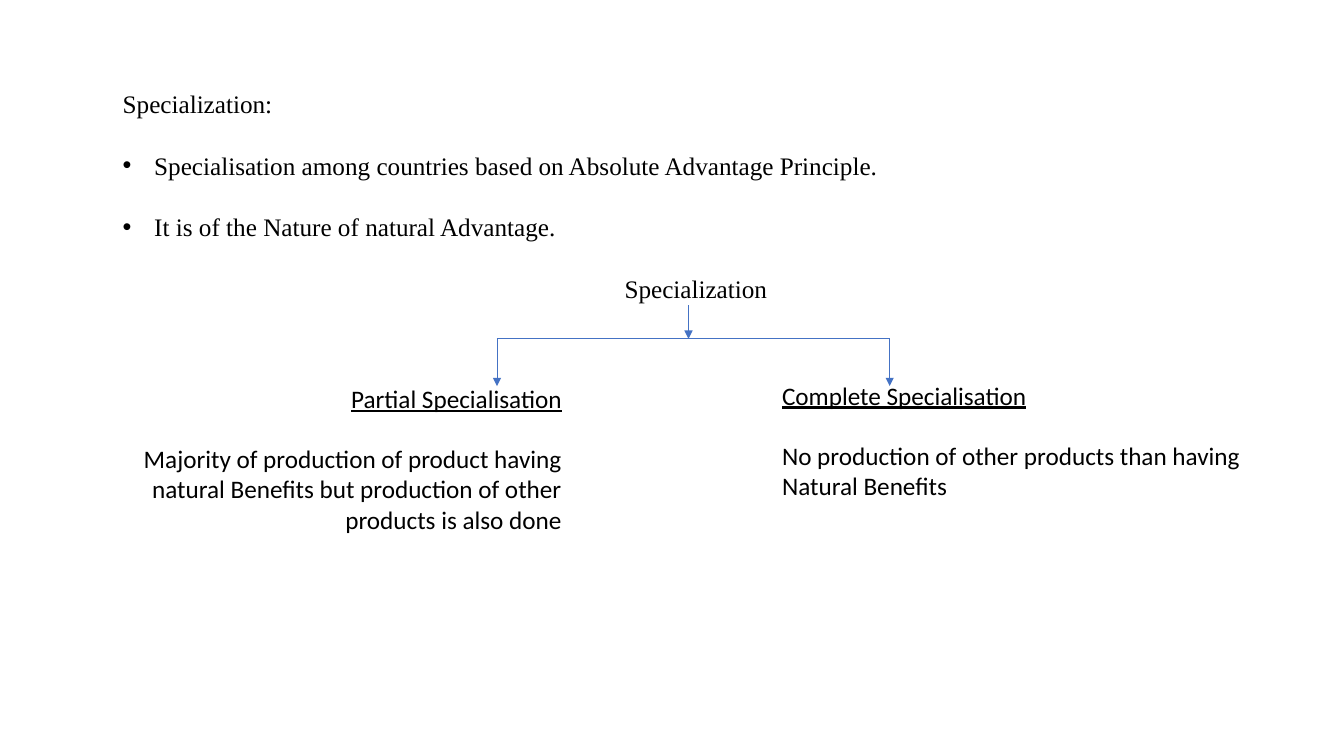
from dataclasses import dataclass

from lxml.etree import SubElement
from pptx import Presentation
from pptx.dml.color import RGBColor
from pptx.enum.shapes import MSO_CONNECTOR as Link
from pptx.enum.text import MSO_AUTO_SIZE as Fit, PP_ALIGN as Align
from pptx.oxml.ns import qn
from pptx.slide import Slide
from pptx.util import Pt

BLACK = RGBColor(0x00, 0x00, 0x00)
BLUE = RGBColor(0x44, 0x72, 0xC4)
SIZE = 18
INDENT = 22.5

STEM_X, LEFT_X, RIGHT_X = 491.8, 355, 635.5
STEM_Y, BAR_Y, TIP_Y = 218.2, 242, 275.8


@dataclass
class Para:
    text: str
    align: Align = Align.LEFT
    bullet: bool = False
    under: bool = False


@dataclass
class Block:
    left: float
    top: float
    width: float
    height: float
    font: str
    paras: list[Para]
    gap: float = 21.6
    pitch: float = 1.0


@dataclass
class Line:
    x1: float
    y1: float
    x2: float
    y2: float
    arrow: bool = True


BLOCKS = [
    Block(80.6, 58.3, 833, 159.8, "Times New Roman", [
        Para("Specialization:"),
        Para("Specialisation among countries based on Absolute Advantage Principle.",
             bullet=True),
        Para("It is of the Nature of natural Advantage.", bullet=True),
        Para("Specialization", Align.CENTER),
    ], gap=21.4, pitch=1.05),
    Block(70.6, 270, 337.7, 116.6, "Calibri", [
        Para("Partial Specialisation", Align.RIGHT, under=True),
        Para("Majority of production of product having natural Benefits "
             "but production of other products is also done", Align.RIGHT),
    ]),
    Block(551.5, 267.8, 344.2, 94.3, "Calibri", [
        Para("Complete Specialisation", under=True),
        Para("No production of other products than having Natural Benefits"),
    ]),
]

LINES = [
    Line(STEM_X, STEM_Y, STEM_X, BAR_Y),
    Line(LEFT_X, BAR_Y, RIGHT_X, BAR_Y, arrow=False),
    Line(LEFT_X, BAR_Y, LEFT_X, TIP_Y),
    Line(RIGHT_X, BAR_Y, RIGHT_X, TIP_Y),
]


def add_block(slide: Slide, block: Block) -> None:
    box = slide.shapes.add_textbox(Pt(block.left), Pt(block.top),
                                   Pt(block.width), Pt(block.height))
    frame = box.text_frame
    frame.word_wrap = True
    frame.auto_size = Fit.SHAPE_TO_FIT_TEXT
    frame.text = "\n".join(para.text for para in block.paras)
    for i, (item, para) in enumerate(zip(frame.paragraphs, block.paras)):
        item.alignment = para.align
        item.line_spacing = block.pitch
        item.space_before = Pt(block.gap if i else 0)
        if para.bullet:
            props = item._p.get_or_add_pPr()
            props.set("marL", str(Pt(INDENT)))
            props.set("indent", str(Pt(-INDENT)))
            SubElement(props, qn("a:buFont"), typeface="Arial")
            SubElement(props, qn("a:buChar"), char="•")
        for run in item.runs:
            font = run.font
            font.name = block.font
            font.size = Pt(SIZE)
            font.color.rgb = BLACK
            font.underline = para.under


def add_line(slide: Slide, line: Line) -> None:
    link = slide.shapes.add_connector(Link.STRAIGHT, Pt(line.x1), Pt(line.y1),
                                      Pt(line.x2), Pt(line.y2))
    link.line.color.rgb = BLUE
    link.line.width = Pt(0.5)
    if line.arrow:
        SubElement(link.line._get_or_add_ln(), qn("a:tailEnd"), type="triangle")
    SubElement(link._element.spPr, qn("a:effectLst"))


def main() -> None:
    deck = Presentation()
    deck.slide_width, deck.slide_height = Pt(960), Pt(540)
    slide = deck.slides.add_slide(deck.slide_layouts.get_by_name("Blank"))
    for block in BLOCKS:
        add_block(slide, block)
    for line in LINES:
        add_line(slide, line)
    deck.save("out.pptx")


if __name__ == "__main__":
    main()
